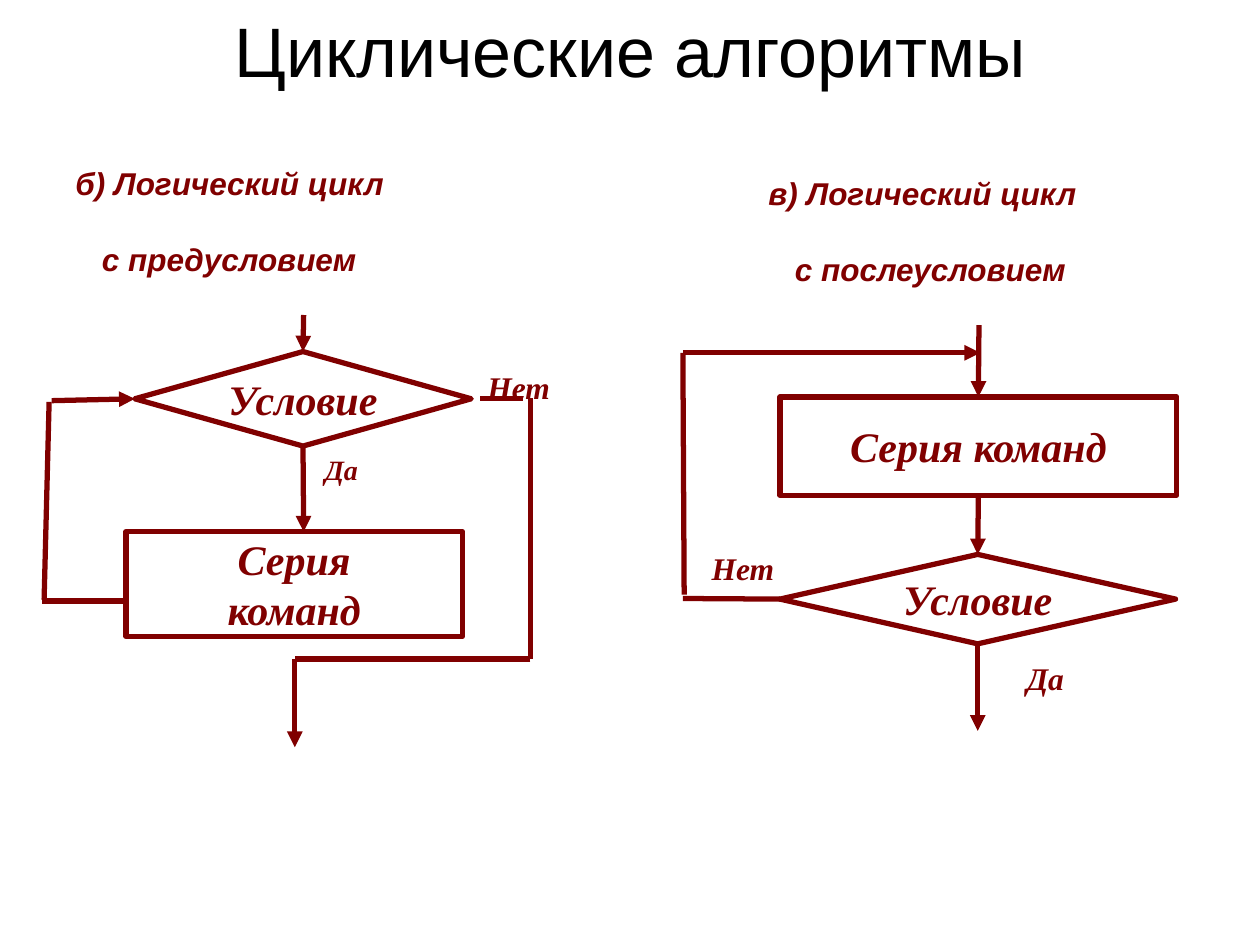
"""Builds a slide with flowcharts of the pre-condition and post-condition loops."""
from lxml import etree
from pptx import Presentation
from pptx.dml.color import RGBColor
from pptx.enum.shapes import MSO_CONNECTOR, MSO_SHAPE
from pptx.enum.text import MSO_ANCHOR, PP_ALIGN
from pptx.oxml.ns import qn
from pptx.util import Inches, Pt

STRAIGHT = MSO_CONNECTOR.STRAIGHT
DECISION = MSO_SHAPE.FLOWCHART_DECISION
PROCESS = MSO_SHAPE.FLOWCHART_PROCESS
MIDDLE = MSO_ANCHOR.MIDDLE
LEFT, CENTER = PP_ALIGN.LEFT, PP_ALIGN.CENTER
TOP_SIDE, LEFT_SIDE, BOTTOM_SIDE = 0, 1, 2

MAROON = RGBColor(0x80, 0x00, 0x00)
BLACK = RGBColor(0x00, 0x00, 0x00)
WHITE = RGBColor(0xFF, 0xFF, 0xFF)
SANS, SERIF = "Arial", "Times New Roman"

TITLE = "Циклические алгоритмы"
HEADINGS = [
    ("б) Логический цикл\nс предусловием", (0.5, 1.25, 2.71, 0.98)),
    ("в) Логический цикл\nс послеусловием", (6, 1.33, 2.71, 0.98)),
]
NODES = {
    "pre condition": (DECISION, "Условие", (1.07, 2.79, 2.67, 0.75)),
    "pre body": (PROCESS, "Серия\nкоманд", (1, 4.22, 2.67, 0.83)),
    "post body": (PROCESS, "Серия команд", (6.19, 3.15, 3.15, 0.78)),
    "post condition": (DECISION, "Условие", (6.19, 4.4, 3.14, 0.71)),
}
BRANCHES = [
    ("Да", 16, (2.48, 3.54, 0.57, 0.37)),
    ("Нет", 18, (3.77, 2.87, 1.06, 0.4)),
    ("Нет", 18, (5.55, 4.31, 1.25, 0.4)),
    ("Да", 18, (8.05, 5.18, 0.66, 0.4)),
]
PRE_TOP = ("pre condition", TOP_SIDE)
PRE_LEFT = ("pre condition", LEFT_SIDE)
PRE_BOTTOM = ("pre condition", BOTTOM_SIDE)
BODY_TOP = ("post body", TOP_SIDE)
BODY_BOTTOM = ("post body", BOTTOM_SIDE)
POST_TOP = ("post condition", TOP_SIDE)
POST_LEFT = ("post condition", LEFT_SIDE)
POST_BOTTOM = ("post condition", BOTTOM_SIDE)
ARROWS = [
    ((2.41, 2.5), PRE_TOP),
    (PRE_BOTTOM, (2.41, 4.22)),
    ((0.41, 3.18), PRE_LEFT),
    ((2.34, 5.23), (2.34, 5.93)),
    ((7.77, 2.58), BODY_TOP),
    (BODY_BOTTOM, POST_TOP),
    ((5.42, 2.8), (7.78, 2.8)),
    (POST_BOTTOM, (7.76, 5.8)),
]
LINES = [
    ((0.39, 3.19), (0.35, 4.76)),
    ((0.33, 4.77), (1, 4.77)),
    ((3.81, 3.16), (4.15, 3.16)),
    ((4.21, 3.16), (4.21, 5.23)),
    ((4.21, 5.23), (2.34, 5.23)),
    ((5.42, 2.8), (5.43, 4.72)),
    ((5.42, 4.75), POST_LEFT),
]


def write(shape, text, size, face, color=MAROON, align=LEFT, strong=True):
    frame = shape.text_frame
    frame.text = text
    for para in frame.paragraphs:
        para.alignment = align
        for span in para.runs:
            font = span.font
            font.name, font.size, font.color.rgb = face, Pt(size), color
            font.bold = font.italic = strong
    return frame


def add_text(page, place, text, size, face, **style):
    box = page.shapes.add_textbox(*map(Inches, place))
    frame = write(box, text, size, face, **style)
    frame.word_wrap = True
    return frame


def add_node(page, kind, text, place):
    node = page.shapes.add_shape(kind, *map(Inches, place))
    node.shadow.inherit = False
    node.fill.solid()
    node.fill.fore_color.rgb = WHITE
    node.line.color.rgb = MAROON
    node.line.width = Pt(3)
    frame = write(node, text, 24, SERIF, align=CENTER)
    frame.word_wrap = False
    frame.vertical_anchor = MIDDLE
    return node


def add_line(page, nodes, start, end, arrow):
    points = [(0, 0) if point[0] in nodes else point for point in (start, end)]
    line = page.shapes.add_connector(
        STRAIGHT, *(Inches(value) for point in points for value in point))
    for point, join in ((start, line.begin_connect), (end, line.end_connect)):
        if point[0] in nodes:
            join(nodes[point[0]], point[1])
    line.line.color.rgb = MAROON
    line.line.width = Pt(3)
    if arrow:
        etree.SubElement(line.line._get_or_add_ln(), qn("a:tailEnd"), type="triangle")
    etree.SubElement(line._element.spPr, qn("a:effectLst"))


def main():
    deck = Presentation()
    deck.slide_width, deck.slide_height = Inches(10), Inches(7.5)
    page = deck.slides.add_slide(deck.slide_layouts[6])

    title = add_text(page, (0.5, 0, 9, 0.78), TITLE, 40, SANS,
                     color=BLACK, align=CENTER, strong=False)
    title.vertical_anchor = MIDDLE

    nodes = {name: add_node(page, *node) for name, node in NODES.items()}
    for arrow, routes in ((False, LINES), (True, ARROWS)):
        for start, end in routes:
            add_line(page, nodes, start, end, arrow)
    for text, size, place in BRANCHES:
        add_text(page, place, text, size, SERIF)
    for text, place in HEADINGS:
        second = add_text(page, place, text, 18, SANS).paragraphs[1]
        second.space_before = Pt(22)
        second._p.get_or_add_pPr().set("marL", str(Inches(0.21)))

    deck.save("out.pptx")


if __name__ == "__main__":
    main()
